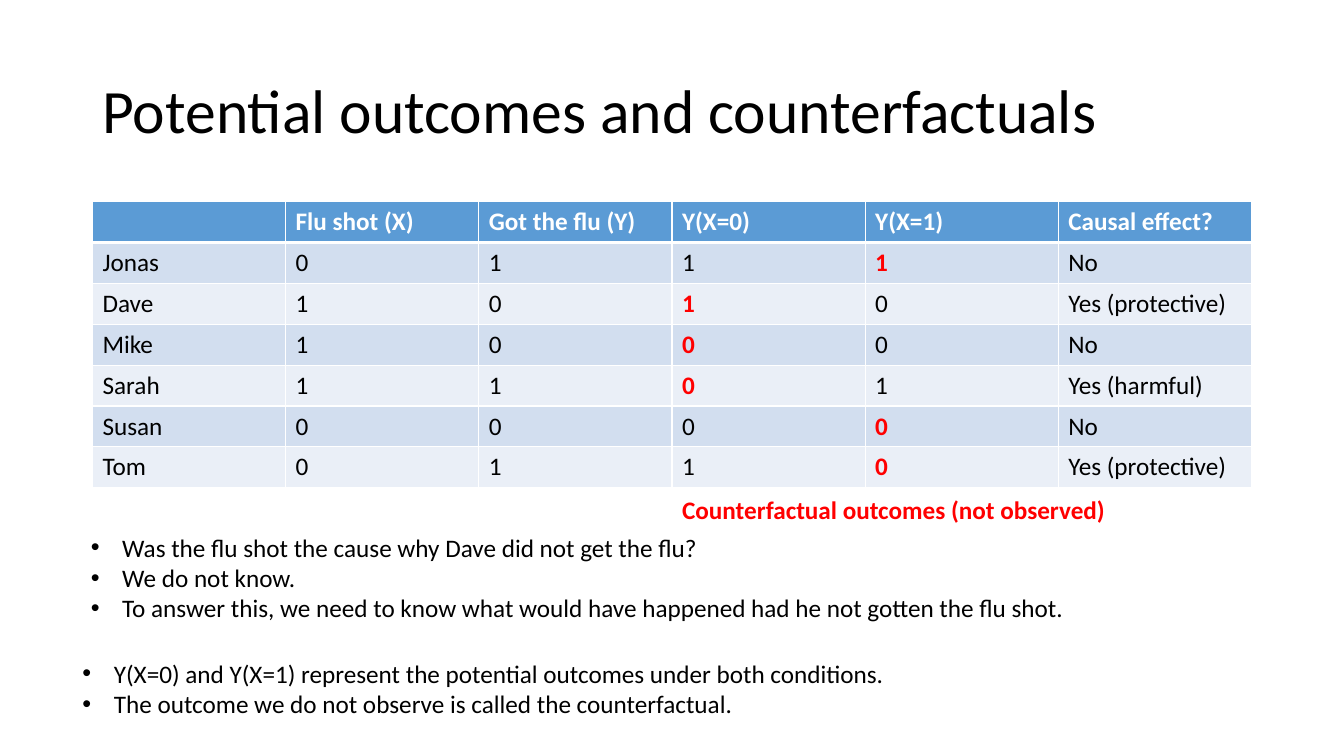
import pptx
import pptx.dml.color
import pptx.enum.text
import pptx.oxml
import pptx.oxml.ns
import pptx.util
from pptx.util import Cm, Pt

FONT = "Calibri"
BLACK, WHITE, RED = "000000", "FFFFFF", "FF0000"
HEADER_FILL, BAND_FILLS = "5B9BD5", ("D2DEEF", "EAEFF7")

TITLE = "Potential outcomes and counterfactuals"
HEADER = ("", "Flu shot (X)", "Got the flu (Y)", "Y(X=0)", "Y(X=1)", "Causal effect?")
# name, flu shot, got the flu, Y(X=0), Y(X=1), causal effect
PEOPLE = [
    ("Jonas", 0, 1, 1, 1, "No"),
    ("Dave", 1, 0, 1, 0, "Yes (protective)"),
    ("Mike", 1, 0, 0, 0, "No"),
    ("Sarah", 1, 1, 0, 1, "Yes (harmful)"),
    ("Susan", 0, 0, 0, 0, "No"),
    ("Tom", 0, 1, 1, 0, "Yes (protective)"),
]
CAPTION = "Counterfactual outcomes (not observed)"
QUESTIONS = [
    "Was the flu shot the cause why Dave did not get the flu?",
    "We do not know.",
    "To answer this, we need to know what would have happened had he not gotten the flu shot.",
]
DEFINITIONS = [
    "Y(X=0) and Y(X=1) represent the potential outcomes under both conditions.",
    "The outcome we do not observe is called the counterfactual.",
]

LEFT, WIDTH = 2.33, 29.21
TABLE_TOP, ROW_HEIGHT = 5.08, 1.03
BULLET_INDENT = 0.79


def rgb(code):
    return pptx.dml.color.RGBColor.from_string(code)


def format_text(para, size=18, color=BLACK, bold=False):
    for span in para.runs:
        span.font.name = FONT
        span.font.size = Pt(size)
        span.font.bold = bold
        span.font.color.rgb = rgb(color)


def add_bullet(para):
    properties = para._p.get_or_add_pPr()
    properties.set("marL", str(Cm(BULLET_INDENT)))
    properties.set("indent", str(-Cm(BULLET_INDENT)))
    namespace = pptx.oxml.ns.nsdecls("a")
    for tag in ('buFont typeface="Arial"', 'buChar char="•"'):
        properties.append(pptx.oxml.parse_xml(f"<a:{tag} {namespace}/>"))


def add_text(page, left, top, width, height, lines, bullets=False, **style):
    box = page.shapes.add_textbox(Cm(left), Cm(top), Cm(width), Cm(height))
    frame = box.text_frame
    frame.word_wrap = True
    frame.text = "\n".join(lines)
    for para in frame.paragraphs:
        format_text(para, **style)
        if bullets:
            add_bullet(para)
    return frame


def set_borders(cell, top=1, bottom=1):
    properties = cell._tc.get_or_add_tcPr()
    for side, points in (("L", 1), ("R", 1), ("T", top), ("B", bottom)):
        properties.append(pptx.oxml.parse_xml(
            f'<a:ln{side} {pptx.oxml.ns.nsdecls("a")} w="{Pt(points)}">'
            f'<a:solidFill><a:srgbClr val="{WHITE}"/></a:solidFill></a:ln{side}>'))


def add_outcome_table(page):
    rows = [HEADER] + PEOPLE
    table = page.shapes.add_table(
        len(rows), len(HEADER), Cm(LEFT), Cm(TABLE_TOP),
        Cm(WIDTH), Cm(ROW_HEIGHT * len(rows))).table
    for r, values in enumerate(rows):
        is_header = r == 0
        # The unobserved outcome is the one for the other value of X.
        unobserved = None if is_header else 4 - values[1]
        for c, value in enumerate(values):
            cell = table.cell(r, c)
            set_borders(cell, top=3 if r == 1 else 1, bottom=3 if is_header else 1)
            cell.fill.solid()
            cell.fill.fore_color.rgb = rgb(HEADER_FILL if is_header else BAND_FILLS[(r - 1) % 2])
            cell.text_frame.text = str(value)
            color = WHITE if is_header else RED if c == unobserved else BLACK
            format_text(cell.text_frame.paragraphs[0], color=color, bold=color != BLACK)


def main():
    deck = pptx.Presentation()
    deck.slide_width, deck.slide_height = Cm(33.87), Cm(19.05)
    page = deck.slides.add_slide(deck.slide_layouts[6])

    title = add_text(page, LEFT, 1.01, WIDTH, 3.68, [TITLE], size=44)
    title.vertical_anchor = pptx.enum.text.MSO_ANCHOR.MIDDLE
    title.paragraphs[0].line_spacing = 0.9

    add_outcome_table(page)
    add_text(page, 1.83, 16.46, 25.32, 1.8, DEFINITIONS, bullets=True)
    add_text(page, 16.94, 12.32, 12.27, 1.02, [CAPTION], color=RED, bold=True)
    add_text(page, 2.04, 13.28, 27.43, 2.57, QUESTIONS, bullets=True)
    deck.save("out.pptx")


if __name__ == "__main__":
    main()
